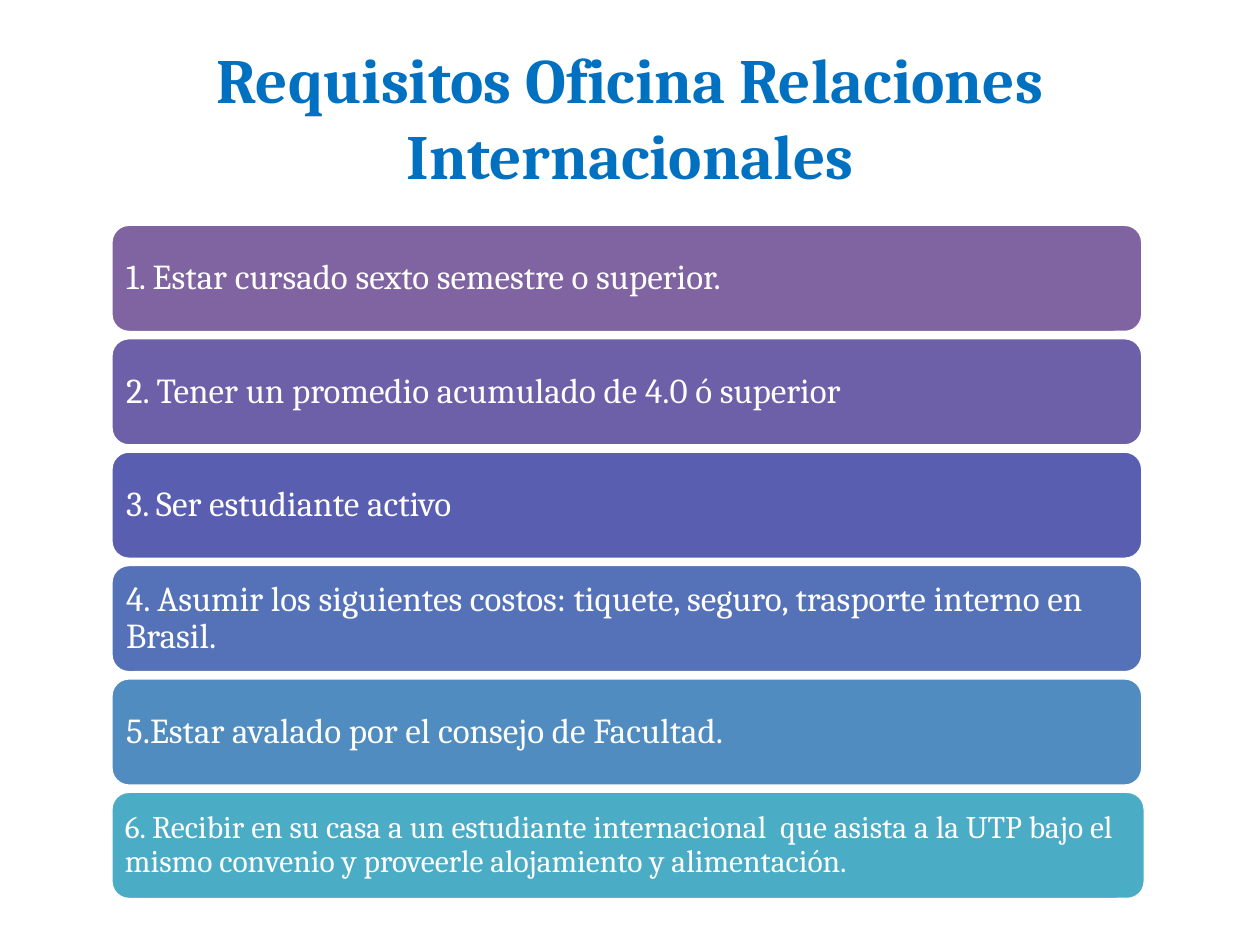
"""Build the slide listing the requirements of the international relations office."""
from dataclasses import dataclass

from pptx import Presentation
from pptx import util as u
from pptx.dml.color import RGBColor
from pptx.enum import shapes, text
from pptx.slide import Slide
from pptx.text.text import TextFrame

PX = u.Inches(1) // 100


@dataclass(frozen=True)
class Theme:
    font: str = "Cambria"
    title: str = "0070C0"
    light: str = "FFFFFF"
    title_pt: int = 36
    body_pt: int = 20
    small_pt: int = 18
    line_pt: int = 2


THEME = Theme()


@dataclass(frozen=True)
class Requirement:
    wording: str
    fill: str
    size: int = THEME.body_pt
    width: int = 819
    inset: int = 8


REQUIREMENTS = (
    Requirement("1. Estar cursado sexto semestre o superior.", "8064A2"),
    Requirement("2. Tener un promedio acumulado de 4.0 ó superior", "6E5FA9"),
    Requirement("3. Ser estudiante activo", "5A5EB1"),
    Requirement("4. Asumir los siguientes costos: tiquete, seguro, trasporte interno en Brasil.", "5572B8"),
    Requirement("5.Estar avalado por el consejo de Facultad.", "508CBF"),
    Requirement(
        "6. Recibir en su casa a un estudiante internacional  que asista a la UTP bajo el "
        "mismo convenio y proveerle alojamiento y alimentación.",
        "4BACC6", THEME.small_pt, 821, 7,
    ),
)
LEFT, TOP, HEIGHT, PITCH = 88, 178, 86, 90


def px(length: int) -> u.Emu:
    return u.Emu(length * PX)


def write(frame: TextFrame, wording: str, size: int, color: str,
          align: text.PP_ALIGN, bold: bool = False) -> None:
    frame.word_wrap = True
    frame.auto_size = text.MSO_AUTO_SIZE.NONE
    frame.vertical_anchor = text.MSO_ANCHOR.MIDDLE
    para = frame.paragraphs[0]
    para.alignment = align
    span = para.add_run()
    span.text = wording
    span.font.name = THEME.font
    span.font.size = u.Pt(size)
    span.font.bold = bold
    span.font.color.rgb = RGBColor.from_string(color)


def add_title(page: Slide, wording: str) -> None:
    title = page.shapes.title
    title.left, title.top, title.width, title.height = map(px, (50, 30, 900, 125))
    write(title.text_frame, wording, THEME.title_pt, THEME.title, text.PP_ALIGN.CENTER, bold=True)


def add_requirement(page: Slide, item: Requirement, top: int) -> None:
    box = page.shapes.add_shape(
        shapes.MSO_SHAPE.ROUNDED_RECTANGLE, px(LEFT), px(top), px(item.width), px(HEIGHT))
    box.shadow.inherit = False
    box.fill.solid()
    box.fill.fore_color.rgb = RGBColor.from_string(item.fill)
    box.line.color.rgb = RGBColor.from_string(THEME.light)
    box.line.width = u.Pt(THEME.line_pt)
    frame = box.text_frame
    frame.margin_left = frame.margin_right = px(item.inset)
    frame.margin_top = frame.margin_bottom = px(4)
    write(frame, item.wording, item.size, THEME.light, text.PP_ALIGN.LEFT)
    frame.paragraphs[0].line_spacing = 0.9


def main() -> None:
    deck = Presentation()
    deck.slide_width, deck.slide_height = px(1000), px(750)
    page = deck.slides.add_slide(deck.slide_layouts.get_by_name("Title Only"))
    add_title(page, "Requisitos Oficina Relaciones Internacionales")
    for index, item in enumerate(REQUIREMENTS):
        add_requirement(page, item, TOP + index * PITCH)
    deck.save("out.pptx")


if __name__ == "__main__":
    main()
